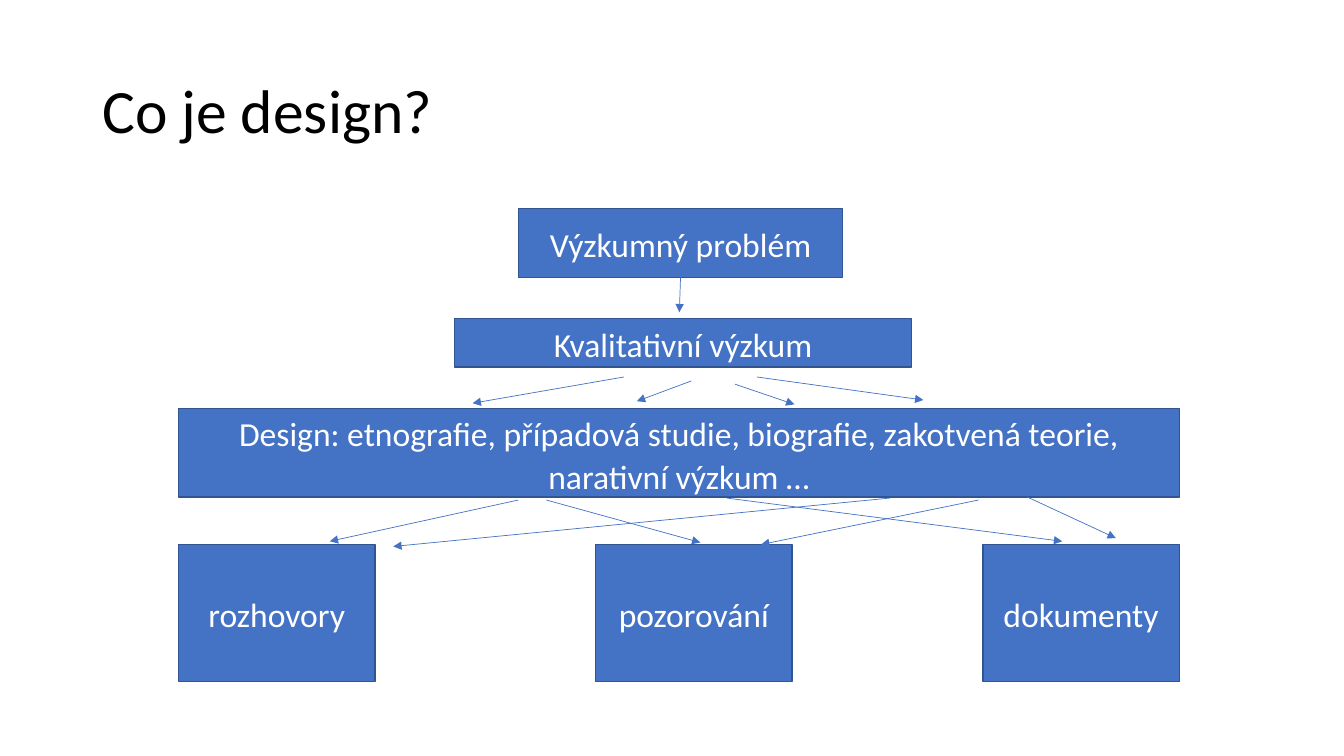
import pptx
import pptx.util
import pptx.dml.color
import pptx.enum.shapes
import pptx.enum.text
from dataclasses import dataclass
from lxml import etree

Cm, Pt = pptx.util.Cm, pptx.util.Pt
RGB = pptx.dml.color.RGBColor.from_string
PP_ALIGN = pptx.enum.text.PP_ALIGN
ANCHOR = pptx.enum.text.MSO_ANCHOR
NS = "{http://schemas.openxmlformats.org/drawingml/2006/main}"


@dataclass
class Theme:
    font: str = "Calibri"
    title_size: int = 44
    box_size: int = 24
    title: str = "000000"
    text: str = "FFFFFF"
    fill: str = "4472C4"
    outline: str = "325491"


theme = Theme()


def write(tf, text, size, color, align, spacing):
    tf.text = text
    tf.word_wrap = True
    tf.auto_size = pptx.enum.text.MSO_AUTO_SIZE.NONE
    tf.vertical_anchor = ANCHOR.MIDDLE
    p = tf.paragraphs[0]
    p.alignment, p.line_spacing = align, spacing
    font = p.runs[0].font
    font.name, font.size = theme.font, Pt(size)
    font.color.rgb = RGB(color)


def add_arrow(x1, y1, x2, y2):
    line = s.shapes.add_connector(pptx.enum.shapes.MSO_CONNECTOR.STRAIGHT,
                                  Cm(x1), Cm(y1), Cm(x2), Cm(y2))
    line.line.color.rgb = RGB(theme.fill)
    line.line.width = Pt(0.5)
    spPr = line.line._get_or_add_ln().getparent()
    etree.SubElement(spPr.find(NS + "ln"), NS + "tailEnd", type="triangle")
    etree.SubElement(spPr, NS + "effectLst")
    return line


prs = pptx.Presentation()
prs.slide_width, prs.slide_height = Cm(33.87), Cm(19.05)
s = prs.slides.add_slide(prs.slide_layouts[5])

# Title
title = s.shapes.title
title.left, title.top, title.width, title.height = Cm(2.33), Cm(1.01), Cm(29.21), Cm(3.68)
write(title.text_frame, "Co je design?", theme.title_size, theme.title, PP_ALIGN.LEFT, 0.9)

# Boxes: three levels, then a row of methods
boxes = [
    ("Výzkumný problém", 13.06, 5.26, 8.18, 1.73),
    ("Kvalitativní výzkum", 11.46, 8.03, 11.51, 1.22),
    ("Design: etnografie, případová studie, biografie, zakotvená teorie, "
     "narativní výzkum …", 4.5, 10.29, 25.22, 2.24),
]
methods = [("rozhovory", 4.5), ("pozorování", 15.01), ("dokumenty", 24.77)]
boxes += [(text, x, 13.72, 4.95, 3.45) for text, x in methods]

drawn = []
for text, x, y, w, h in boxes:
    sp = s.shapes.add_shape(pptx.enum.shapes.MSO_SHAPE.RECTANGLE, Cm(x), Cm(y), Cm(w), Cm(h))
    sp.shadow.inherit = False
    sp.fill.solid()
    sp.fill.fore_color.rgb = RGB(theme.fill)
    sp.line.color.rgb = RGB(theme.outline)
    sp.line.width = Pt(1)
    write(sp.text_frame, text, theme.box_size, theme.text, PP_ALIGN.CENTER, 1.07)
    sp.text_frame.paragraphs[0].space_after = Pt(8)
    drawn.append(sp)

# Arrow from the problem to the research approach
add_arrow(17.15, 6.99, 17.12, 7.87).begin_connect(drawn[0], 2)

# Arrows from the approach to the designs, then from the designs to the methods
for ends in [
    (15.72, 9.5, 11.91, 10.16),
    (19.08, 9.5, 23.27, 10.08),
    (17.42, 9.6, 16.05, 10.11),
    (18.52, 9.68, 20.02, 10.19),
    (13.06, 12.6, 8.31, 13.64),
    (13.77, 12.6, 17.65, 13.67),
    (22.43, 12.55, 9.91, 13.77),
    (18.31, 12.55, 26.77, 13.64),
    (24.66, 12.6, 19.18, 13.72),
    (25.88, 12.52, 28.12, 13.56),
]:
    add_arrow(*ends)

prs.save("out.pptx")
